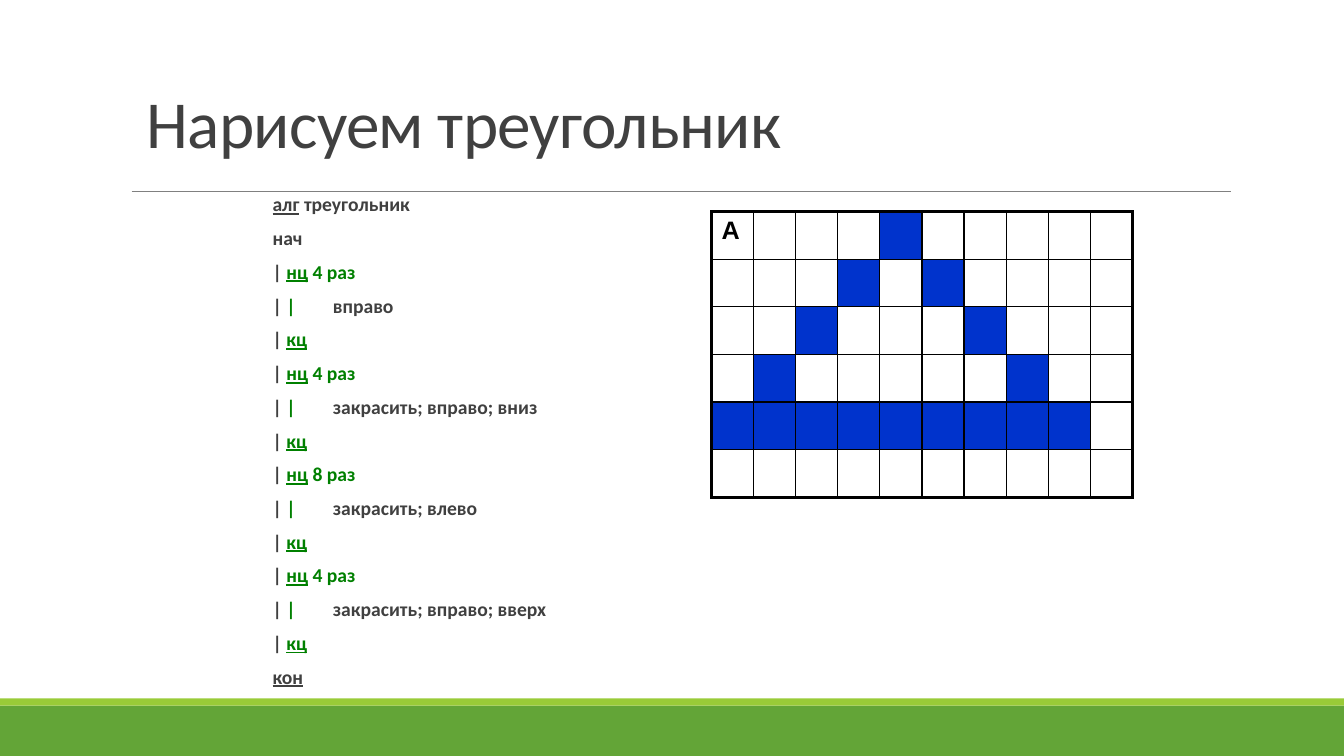
from lxml.etree import SubElement
from pptx import Presentation
from pptx.dml.color import RGBColor
from pptx.enum.shapes import MSO_CONNECTOR as Connector, MSO_SHAPE as Shape
from pptx.enum.text import MSO_ANCHOR as Anchor
from pptx.oxml.ns import qn
from pptx.util import Cm, Pt

GRAY, GREEN, BLACK = "404040", "008000", "000000"
PAINTED = {
    (0, 4), (1, 3), (1, 5), (2, 2), (2, 6), (3, 1), (3, 7),
    *((4, column) for column in range(9)),
}


def color(value):
    return RGBColor.from_string(value)


def add_span(para, text, size=14, font="Calibri", ink=GRAY, bold=False,
             underline=False, spacing=0):
    span = para.add_run()
    span.text = text
    style = span.font
    style.size, style.name, style.bold = Pt(size), font, bold
    style.underline = underline
    style.color.rgb = color(ink)
    if spacing:
        span._r.get_or_add_rPr().set("spc", str(int(spacing * 100)))


def add_text_box(page, box, margin=0.25, anchor=Anchor.TOP):
    frame = page.shapes.add_textbox(*map(Cm, box)).text_frame
    frame.word_wrap = True
    frame.vertical_anchor = anchor
    frame.margin_left = frame.margin_right = Cm(margin)
    return frame


def add_band(page, box, fill):
    band = page.shapes.add_shape(Shape.RECTANGLE, *map(Cm, box))
    band.shadow.inherit = False
    band.fill.solid()
    band.fill.fore_color.rgb = color(fill)
    band.line.fill.background()


def add_footer(page, box):
    left, top, width, height = box
    stripe = 0.18
    add_band(page, (left, top + stripe, width, height - stripe), "63A537")
    add_band(page, (left, top, width, stripe), "99CB38")


def add_title(page, box, text):
    left, top, width, height = box
    para = add_text_box(page, box, anchor=Anchor.BOTTOM).paragraphs[0]
    para.line_spacing = 0.85
    add_span(para, text, size=48, spacing=-0.5)
    rule_left, rule_top = Cm(left - 0.13), Cm(top + height + 0.6)
    rule = page.shapes.add_connector(
        Connector.STRAIGHT, rule_left, rule_top, rule_left + Cm(27.69), rule_top)
    rule.line.color.rgb = color("808080")
    rule.line.width = Pt(0.5)
    SubElement(rule._element.spPr, qn("a:effectLst"))


def loop_lines(count, commands):
    bar = ("| ", {})
    return [
        [bar, ("нц", {"ink": GREEN, "underline": True}),
         (f" {count} раз", {"ink": GREEN})],
        [bar, ("|", {"ink": GREEN}), (f" \t{commands}", {})],
        [bar, ("кц", {"ink": GREEN, "underline": True})],
    ]


def add_program(page, box, loops):
    lines = [[("алг", {"underline": True}), (" треугольник", {})], [("нач", {})]]
    for count, commands in loops:
        lines += loop_lines(count, commands)
    lines.append([("кон", {"underline": True})])
    frame = add_text_box(page, box, margin=0)
    for index, line in enumerate(lines):
        para = frame.add_paragraph() if index else frame.paragraphs[0]
        para.line_spacing = 0.6
        para.space_before, para.space_after = Pt(12), Pt(2)
        indent = Cm(0.25)
        props = para._p.get_or_add_pPr()
        props.set("marL", str(indent))
        props.set("indent", str(-indent))
        for text, style in line:
            add_span(para, text, bold=True, **style)


def add_borders(cell, widths):
    props = cell._tc.get_or_add_tcPr()
    for index, (side, width) in enumerate(zip("LRTB", widths)):
        edge = SubElement(props, qn(f"a:ln{side}"), w=str(Pt(width)))
        fill = SubElement(edge, qn("a:solidFill"))
        SubElement(fill, qn("a:srgbClr"), val=BLACK)
        props.insert(index, edge)


def add_field(page, box, rows, columns):
    left, top, width, height = box
    table = page.shapes.add_table(rows, columns, *map(Cm, box)).table
    table.first_row = table.horz_banding = False
    for column in table.columns:
        column.width = Cm(width / columns)
    for row in table.rows:
        row.height = Cm(height / rows)
    for row in range(rows):
        for column in range(columns):
            cell = table.cell(row, column)
            if (row, column) in PAINTED:
                cell.fill.solid()
                cell.fill.fore_color.rgb = color("0033CC")
            else:
                cell.fill.background()
            outer = (column == 0, column == columns - 1, row == 0, row == rows - 1)
            add_borders(cell, [2.25 if edge else 1 for edge in outer])
    add_span(table.cell(0, 0).text_frame.paragraphs[0], "А",
             size=18, font="Arial", ink=BLACK, bold=True)


def main():
    deck = Presentation()
    deck.slide_width, deck.slide_height = Cm(33.87), Cm(19.05)
    page = deck.slides.add_slide(deck.slide_layouts[6])
    add_footer(page, (0, 17.6, 33.87, 1.45))
    add_title(page, (3.45, 0.28, 26.52, 3.94), "Нарисуем треугольник")
    add_program(page, (6.87, 4.93, 11.07, 13.21), [
        (4, "вправо"),
        (4, "закрасить; вправо; вниз"),
        (8, "закрасить; влево"),
        (4, "закрасить; вправо; вверх"),
    ])
    add_field(page, (17.93, 5.33, 10.62, 7.2), 6, 10)
    deck.save("out.pptx")


if __name__ == "__main__":
    main()
